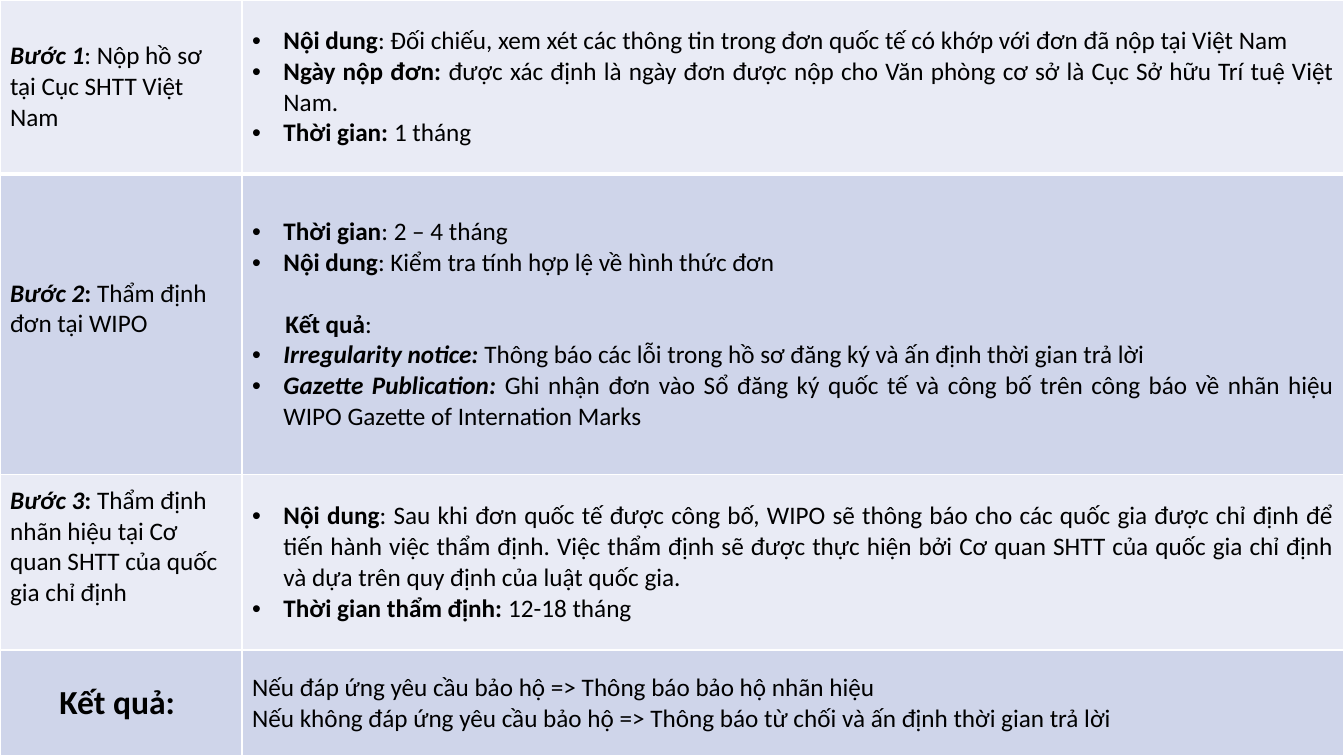
from lxml import etree
from pptx import Presentation
from pptx import util as u
from pptx.dml.color import RGBColor
from pptx.enum import text
from pptx.oxml import ns

HUES = {"ink": "000000", "pale": "E9EBF5", "deep": "CFD5EA", "rule": "FFFFFF"}
WIDE, HIGH = 33.87, 19.05
COLS = [6.1, 27.77]
TALL = [4.39, 7.57, 4.42, 2.67]
HANG = 0.79
LINE = 0.78
LEFT, JUST, MID = text.PP_ALIGN.LEFT, text.PP_ALIGN.JUSTIFY, text.PP_ALIGN.CENTER

STEPS = [
    dict(
        head=[("Bước 1", "bi"), (": Nộp hồ sơ tại Cục SHTT Việt Nam", "")],
        body=[
            dict(runs=[("Nội dung", "b"), (": Đối chiếu, xem xét các thông tin trong đơn quốc tế có khớp với đơn đã nộp tại Việt Nam", "")], dot=True),
            dict(runs=[("Ngày nộp đơn: ", "b"), ("được xác định là ngày đơn được nộp cho Văn phòng cơ sở là Cục Sở hữu Trí tuệ Việt Nam.", "")], dot=True),
            dict(runs=[("Thời gian: ", "b"), ("1 tháng", "")], dot=True),
        ],
    ),
    dict(
        head=[("Bước 2", "bi"), (": ", "b"), ("Thẩm định đơn tại WIPO", "")],
        lift=LINE,
        body=[
            dict(runs=[("Thời gian", "b"), (": 2 – 4 tháng", "")], dot=True),
            dict(runs=[("Nội dung", "b"), (": Kiểm tra tính hợp lệ về hình thức đơn", "")], dot=True),
            dict(runs=[("Kết quả", "b"), (":", "")], inset=0.84, gap=22),
            dict(runs=[("Irregularity notice: ", "bi"), ("Thông báo các lỗi trong hồ sơ đăng ký và ấn định thời gian trả lời", "")], dot=True),
            dict(runs=[("Gazette Publication: ", "bi"), ("Ghi nhận đơn vào Sổ đăng ký quốc tế và công bố trên công báo về nhãn hiệu WIPO Gazette of Internation Marks", "")], dot=True),
        ],
    ),
    dict(
        head=[("Bước 3", "bi"), (": ", "b"), ("Thẩm định nhãn hiệu tại Cơ quan SHTT của quốc gia chỉ định", "")],
        lift=LINE,
        body=[
            dict(runs=[("Nội dung", "b"), (": Sau khi đơn quốc tế được công bố, WIPO sẽ thông báo cho các quốc gia được chỉ định để tiến hành việc thẩm định. Việc thẩm định sẽ được thực hiện bởi Cơ quan SHTT của quốc gia chỉ định và dựa trên quy định của luật quốc gia.", "")], dot=True),
            dict(runs=[("Thời gian thẩm định:", "b"), (" 12-18 tháng", "")], dot=True),
        ],
    ),
    dict(
        head=[("Kết quả: ", "b")],
        look=dict(size=24, align=MID),
        body=[
            dict(runs=[("Nếu đáp ứng yêu cầu bảo hộ => Thông báo bảo hộ nhãn hiệu", "")]),
            dict(runs=[("Nếu không đáp ứng yêu cầu bảo hộ => Thông báo từ chối và ấn định thời gian trả lời", "")]),
        ],
    ),
]


def hue(name):
    """Return the named colour."""
    return RGBColor.from_string(HUES[name])


def write(para, runs, size=18, align=LEFT, dot=False, inset=0, gap=0):
    """Fill a paragraph with styled runs, with a bullet if asked."""
    para.alignment = align
    if gap:
        para.space_before = u.Pt(gap)
    props = para._p.get_or_add_pPr()
    if dot:
        props.set("marL", str(u.Cm(HANG)))
        props.set("indent", str(-u.Cm(HANG)))
        etree.SubElement(props, ns.qn("a:buFont")).set("typeface", "Arial")
        etree.SubElement(props, ns.qn("a:buChar")).set("char", "•")
    elif inset:
        props.set("marL", str(u.Cm(inset)))
    for words, style in runs:
        run = para.add_run()
        run.text = words
        font = run.font
        font.name, font.size = "Calibri", u.Pt(size)
        font.bold, font.italic = "b" in style, "i" in style
        font.color.rgb = hue("ink")


def edge(cell, **sides):
    """Draw the cell borders, given their widths in points by side."""
    props = cell._tc.get_or_add_tcPr()
    for side in "LRTB":
        line = etree.SubElement(props, ns.qn("a:ln" + side), w=str(u.Pt(sides.get(side, 1))))
        fill = etree.SubElement(line, ns.qn("a:solidFill"))
        etree.SubElement(fill, ns.qn("a:srgbClr"), val=HUES["rule"])


def grid(slide, left, top, width, height):
    """Place the table of filing steps in the given box."""
    table = slide.shapes.add_table(
        len(STEPS), len(COLS), u.Cm(left), u.Cm(top), u.Cm(width), u.Cm(height)
    ).table
    table.first_row = table.horz_banding = False
    for col, size in zip(table.columns, COLS):
        col.width = u.Cm(width * size / WIDE)
    for num, (row, step) in enumerate(zip(table.rows, STEPS)):
        row.height = u.Cm(height * TALL[num] / HIGH)
        heavy = {0: {"B": 3}, 1: {"T": 3}}.get(num, {})
        for cell in row.cells:
            edge(cell, **heavy)
            cell.fill.solid()
            cell.fill.fore_color.rgb = hue("deep" if num % 2 else "pale")
            cell.vertical_anchor = text.MSO_ANCHOR.MIDDLE
        head, body = row.cells
        head.margin_bottom = u.Cm(0.13 + step.get("lift", 0))
        write(head.text_frame.paragraphs[0], step["head"], **step.get("look", {}))
        frame = body.text_frame
        for pos, item in enumerate(step["body"]):
            para = frame.add_paragraph() if pos else frame.paragraphs[0]
            write(para, align=JUST, **item)


def main():
    """Build and save the slide."""
    deck = Presentation()
    deck.slide_width, deck.slide_height = u.Cm(WIDE), u.Cm(HIGH)
    slide = deck.slides.add_slide(deck.slide_layouts[6])
    grid(slide, 0, 0, WIDE, HIGH)
    deck.save("out.pptx")


if __name__ == "__main__":
    main()
